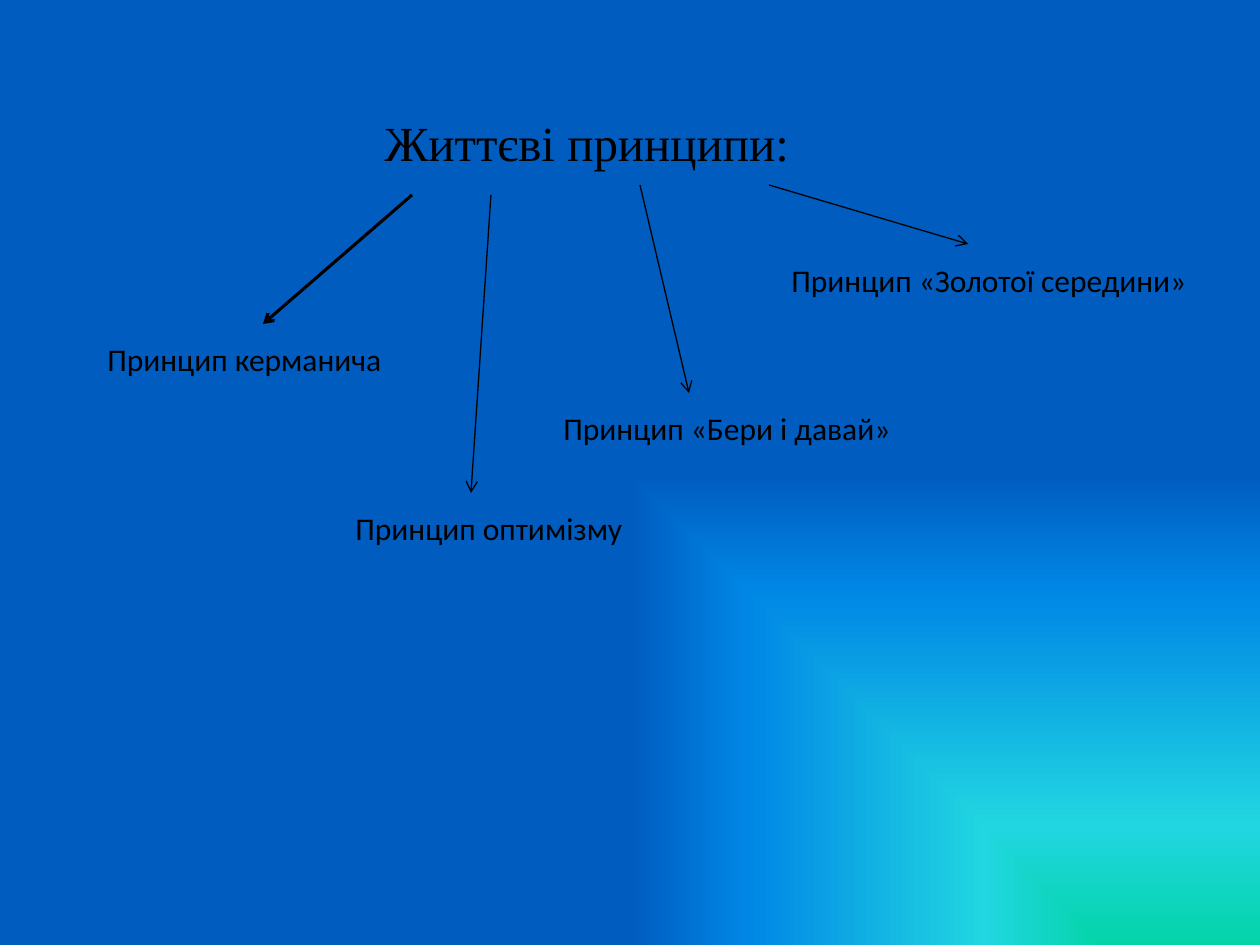
from lxml import etree
from pptx import Presentation
from pptx.dml.color import RGBColor
from pptx.enum.shapes import MSO_CONNECTOR
from pptx.enum.text import MSO_ANCHOR, MSO_AUTO_SIZE, PP_ALIGN
from pptx.oxml import parse_xml
from pptx.oxml.ns import nsdecls, qn
from pptx.util import Emu, Pt

STRAIGHT = MSO_CONNECTOR.STRAIGHT
TOP, MIDDLE = MSO_ANCHOR.TOP, MSO_ANCHOR.MIDDLE
FIT_SHAPE = MSO_AUTO_SIZE.SHAPE_TO_FIT_TEXT
LEFT = PP_ALIGN.LEFT
PIXELS_PER_INCH = 126
TITLE_ONLY_LAYOUT = 5


def px(length):
    return Emu(round(length * 914400 / PIXELS_PER_INCH))


def color(hex_value):
    return RGBColor.from_string(hex_value)


class PrinciplesSlide:
    """Holds the style and the slide, and adds each kind of element."""

    ink = "000000"
    title_font, title_size = "Times New Roman", 28
    label_font, label_size = "Calibri", 18
    label_height = 50
    gradient = [(0, "03D4A8"), (25, "21D6E0"), (75, "0087E6"), (100, "005CBF")]

    def __init__(self, presentation):
        layout = presentation.slide_layouts[TITLE_ONLY_LAYOUT]
        self.slide = presentation.slides.add_slide(layout)

    def background(self):
        self.slide.background.fill.gradient()
        stops = "".join(
            f'<a:gs pos="{percent * 1000}"><a:srgbClr val="{hex_value}"/></a:gs>'
            for percent, hex_value in self.gradient
        )
        fill = parse_xml(
            f'<a:gradFill {nsdecls("a")} rotWithShape="1"><a:gsLst>{stops}</a:gsLst>'
            '<a:path path="rect"><a:fillToRect l="100000" t="100000"/></a:path>'
            "</a:gradFill>"
        )
        linear = self.slide.element.find(".//" + qn("a:gradFill"))
        linear.getparent().replace(linear, fill)

    def set_text(self, shape, text, font_name, size, anchor):
        frame = shape.text_frame
        frame.text = text
        frame.word_wrap = False
        frame.auto_size = FIT_SHAPE
        frame.vertical_anchor = anchor
        paragraph = frame.paragraphs[0]
        paragraph.alignment = LEFT
        paragraph.font.name = font_name
        paragraph.font.size = Pt(size)
        paragraph.font.color.rgb = color(self.ink)

    def title(self, text, left, top, width, height):
        shape = self.slide.shapes.title
        shape.left, shape.top = px(left), px(top)
        shape.width, shape.height = px(width), px(height)
        self.set_text(shape, text, self.title_font, self.title_size, MIDDLE)

    def label(self, text, left, top, width):
        shape = self.slide.shapes.add_textbox(
            px(left), px(top), px(width), px(self.label_height)
        )
        self.set_text(shape, text, self.label_font, self.label_size, TOP)

    def arrow(self, start, end, weight):
        connector = self.slide.shapes.add_connector(
            STRAIGHT, *map(px, start), *map(px, end)
        )
        connector.line.color.rgb = color(self.ink)
        connector.line.width = Pt(weight)
        properties = connector.element.spPr
        etree.SubElement(properties.find(qn("a:ln")), qn("a:tailEnd"), type="arrow")
        etree.SubElement(properties, qn("a:effectLst"))


def main():
    presentation = Presentation()
    presentation.slide_width, presentation.slide_height = px(1260), px(945)

    page = PrinciplesSlide(presentation)
    page.background()
    page.title("Життєві принципи:", 372, 106, 435, 72)

    arrows = [
        ((412, 195), (263, 324), 1.75),
        ((491, 195), (471, 493), 0.75),
        ((640, 185), (689, 393), 0.75),
        ((769, 185), (968, 244), 0.75),
    ]
    for start, end, weight in arrows:
        page.arrow(start, end, weight)

    labels = [
        ("Принцип керманича", 95, 334, 302),
        ("Принцип оптимізму", 343, 503, 295),
        ("Принцип «Бери і давай»", 551, 403, 357),
        ("Принцип «Золотої середини»", 779, 255, 426),
    ]
    for text, left, top, width in labels:
        page.label(text, left, top, width)

    presentation.save("out.pptx")


if __name__ == "__main__":
    main()
